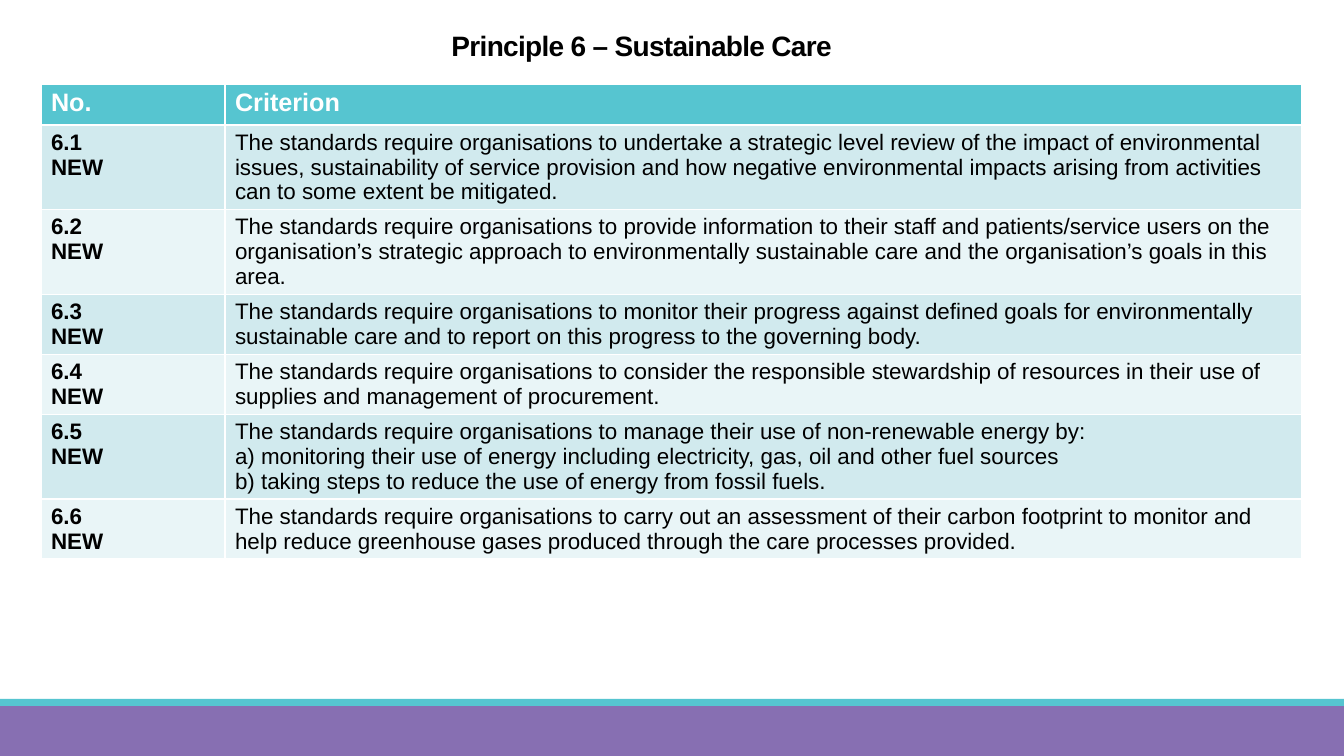
from pptx import Presentation
from pptx import util as u
from pptx.dml.color import RGBColor
from pptx.enum import shapes, text

WIDTH, HEIGHT = 1344, 756
SCALE = 12192000 / WIDTH
FONT = "Arial"
COLORS = {
    "black": "000000",
    "white": "FFFFFF",
    "teal": "56C5D0",
    "purple": "876FB2",
    "band_dark": "D1EAEE",
    "band_light": "E9F5F7",
}
TITLE = "Principle 6 – Sustainable Care"
HEADER = ("No.", "Criterion")
CRITERIA = [
    "The standards require organisations to undertake a strategic level review of the impact of "
    "environmental issues, sustainability of service provision and how negative environmental "
    "impacts arising from activities can to some extent be mitigated.",
    "The standards require organisations to provide information to their staff and "
    "patients/service users on the organisation’s strategic approach to environmentally "
    "sustainable care and the organisation’s goals in this area.",
    "The standards require organisations to monitor their progress against defined goals for "
    "environmentally sustainable care and to report on this progress to the governing body.",
    "The standards require organisations to consider the responsible stewardship of resources "
    "in their use of supplies and management of procurement.",
    "The standards require organisations to manage their use of non-renewable energy by:\n"
    "a) monitoring their use of energy including electricity, gas, oil and other fuel sources\n"
    "b) taking steps to reduce the use of energy from fossil fuels.",
    "The standards require organisations to carry out an assessment of their carbon footprint "
    "to monitor and help reduce greenhouse gases produced through the care processes provided.",
]


def px(n):
    return u.Emu(round(n * SCALE))


def rgb(name):
    return RGBColor.from_string(COLORS[name])


def paint(sp, color):
    sp.fill.solid()
    sp.fill.fore_color.rgb = rgb(color)


def style_text(tf, size, color, bold):
    for p in tf.paragraphs:
        for r in p.runs:
            r.font.name = FONT
            r.font.size = u.Pt(size)
            r.font.bold = bold
            r.font.color.rgb = rgb(color)


def add_bar(slide, x, y, w, h, color):
    sp = slide.shapes.add_shape(shapes.MSO_SHAPE.RECTANGLE, px(x), px(y), px(w), px(h))
    sp.shadow.inherit = False
    paint(sp, color)
    sp.line.fill.background()


def add_footer(slide, x, y, w, h):
    stripe = 7
    add_bar(slide, x, y + stripe, w, h - stripe, "purple")
    add_bar(slide, x, y, w, stripe, "teal")


def add_title(slide, x, y, w, h):
    sp = slide.shapes.title
    sp.left, sp.top, sp.width, sp.height = px(x), px(y), px(w), px(h)
    paint(sp, "white")
    tf = sp.text_frame
    tf.text = TITLE
    tf.word_wrap = True
    tf.auto_size = text.MSO_AUTO_SIZE.NONE
    tf.vertical_anchor = text.MSO_ANCHOR.TOP
    p = tf.paragraphs[0]
    p.alignment = text.PP_ALIGN.CENTER
    p.line_spacing = 0.85
    style_text(tf, 20, "black", True)
    p.runs[0]._r.get_or_add_rPr().set("spc", "-50")


def add_criteria(slide, x, y, w, row_h):
    rows = [HEADER] + [(f"6.{i}\nNEW", c) for i, c in enumerate(CRITERIA, 1)]
    number_w = 184
    table = slide.shapes.add_table(
        len(rows), 2, px(x), px(y), px(w), px(row_h * len(rows))
    ).table
    table.columns[0].width = px(number_w)
    table.columns[1].width = px(w - number_w)
    for i, row in enumerate(rows):
        table.rows[i].height = px(row_h)
        for j, words in enumerate(row):
            cell = table.cell(i, j)
            cell.text_frame.text = words
            if i == 0:
                paint(cell, "teal")
                style_text(cell.text_frame, 18, "white", True)
            else:
                paint(cell, "band_dark" if i % 2 else "band_light")
                style_text(cell.text_frame, 16, "black", j == 0)


def main():
    prs = Presentation()
    prs.slide_width, prs.slide_height = px(WIDTH), px(HEIGHT)
    slide = prs.slides.add_slide(prs.slide_layouts[5])
    add_footer(slide, 0, 699, WIDTH, 57)
    add_title(slide, 150, 29, 983, 72)
    add_criteria(slide, 41, 84, 1261, 41)
    prs.save("out.pptx")


if __name__ == "__main__":
    main()
